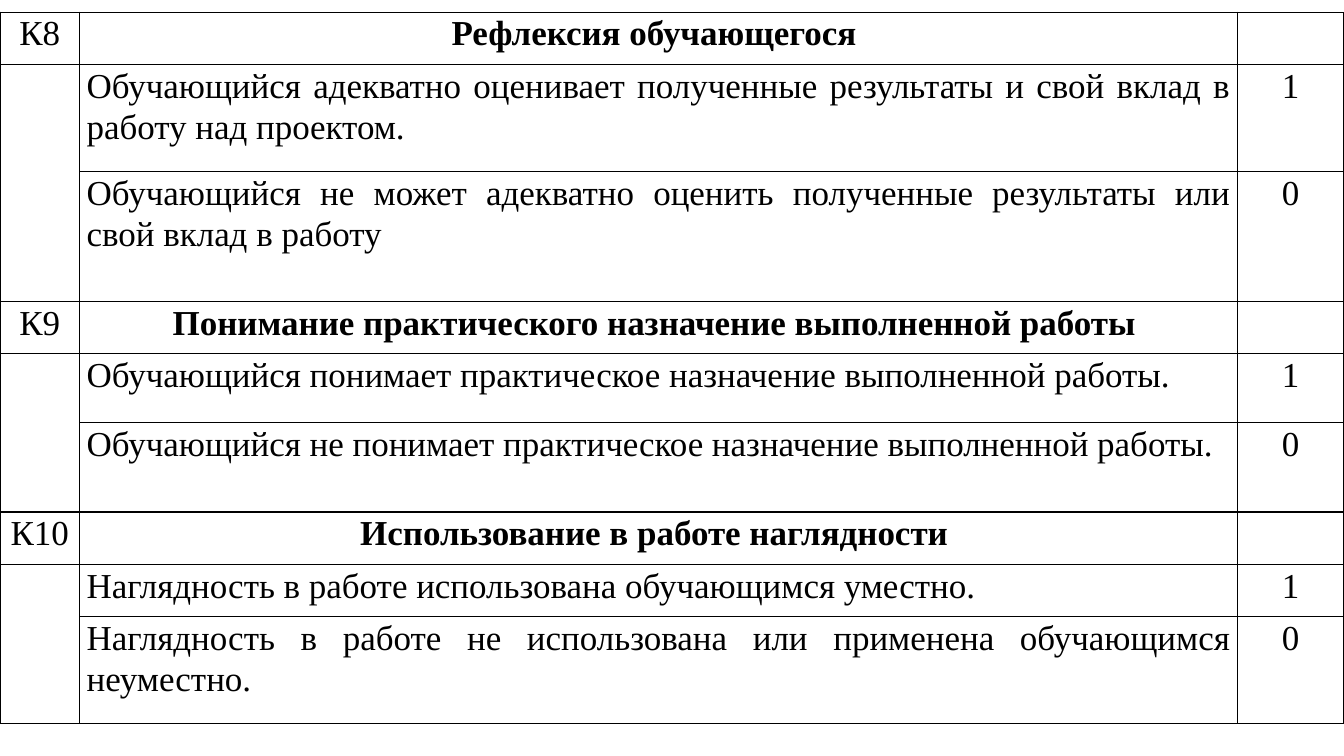
"""Build a slide with the assessment table for criteria К8 to К10."""
import itertools

import lxml.etree
import pptx
import pptx.dml.color
import pptx.enum.text
import pptx.oxml.ns
import pptx.util

Inches = pptx.util.Inches
Pt = pptx.util.Pt
ALIGN = pptx.enum.text.PP_ALIGN

CRITERIA = [
    ("К8", "Рефлексия обучающегося ", [
        ("Обучающийся адекватно оценивает полученные результаты и свой вклад в работу над проектом.", "1"),
        ("Обучающийся не может адекватно оценить полученные результаты или свой вклад в работу", "0"),
    ]),
    ("К9", "Понимание практического назначение выполненной работы ", [
        ("Обучающийся понимает практическое назначение выполненной работы. ", "1"),
        ("Обучающийся не понимает практическое назначение выполненной работы.", "0"),
    ]),
    ("К10", "Использование в работе наглядности ", [
        ("Наглядность в работе использована обучающимся уместно. ", "1"),
        ("Наглядность в работе не использована или применена обучающимся неуместно.", "0"),
    ]),
]
COL_WIDTHS = [0.79, 11.48, 1.06]
ROW_HEIGHTS = [0.52, 1.06, 1.29, 0.52, 0.68, 0.89, 0.52, 0.52, 1.06]
TABLE_TOP = 0.12
THEME = {
    "font": "Times New Roman",
    "size": Pt(25),
    "color": "000000",
    "border": Pt(1),
    "spacing": 1.07,
    "margin": Inches(0.07),
}


def add_borders(cell):
    """Draw a solid line on all four sides of a cell."""
    props = cell._tc.get_or_add_tcPr()
    qn = pptx.oxml.ns.qn
    for side in ("a:lnL", "a:lnR", "a:lnT", "a:lnB"):
        line = lxml.etree.SubElement(props, qn(side), w=str(int(THEME["border"])))
        fill = lxml.etree.SubElement(line, qn("a:solidFill"))
        lxml.etree.SubElement(fill, qn("a:srgbClr"), val=THEME["color"])


def format_cell(cell):
    """Give a cell its borders, margins and empty fill."""
    add_borders(cell)
    cell.fill.background()
    cell.margin_left = cell.margin_right = THEME["margin"]
    cell.margin_top = cell.margin_bottom = 0


def write_cell(cell, text, align=ALIGN.CENTER, bold=False):
    """Put one styled paragraph in a cell."""
    p = cell.text_frame.paragraphs[0]
    p.text = text
    p.alignment = align
    p.line_spacing = THEME["spacing"]
    p.font.name = THEME["font"]
    p.font.size = THEME["size"]
    p.font.bold = bold
    p.font.color.rgb = pptx.dml.color.RGBColor.from_string(THEME["color"])


def add_criteria_table(slide):
    """Add the table and fill it criterion by criterion."""
    table = slide.shapes.add_table(
        len(ROW_HEIGHTS), len(COL_WIDTHS), 0, Inches(TABLE_TOP),
        Inches(sum(COL_WIDTHS)), Inches(sum(ROW_HEIGHTS))).table
    table.first_row = table.horz_banding = False
    for column, width in zip(table.columns, COL_WIDTHS):
        column.width = Inches(width)
    for row, height in zip(table.rows, ROW_HEIGHTS):
        row.height = Inches(height)
    for cell in table.iter_cells():
        format_cell(cell)

    row_numbers = itertools.count()
    for code, title, levels in CRITERIA:
        top = next(row_numbers)
        write_cell(table.cell(top, 0), code)
        write_cell(table.cell(top, 1), title, bold=True)
        for level, score in levels:
            row = next(row_numbers)
            write_cell(table.cell(row, 1), level, ALIGN.JUSTIFY)
            write_cell(table.cell(row, 2), score)
        table.cell(top + 1, 0).merge(table.cell(top + len(levels), 0))


def main():
    """Create and save the presentation."""
    prs = pptx.Presentation()
    prs.slide_width, prs.slide_height = Inches(13.33), Inches(7.5)
    add_criteria_table(prs.slides.add_slide(prs.slide_layouts[6]))
    prs.save("out.pptx")


if __name__ == "__main__":
    main()
